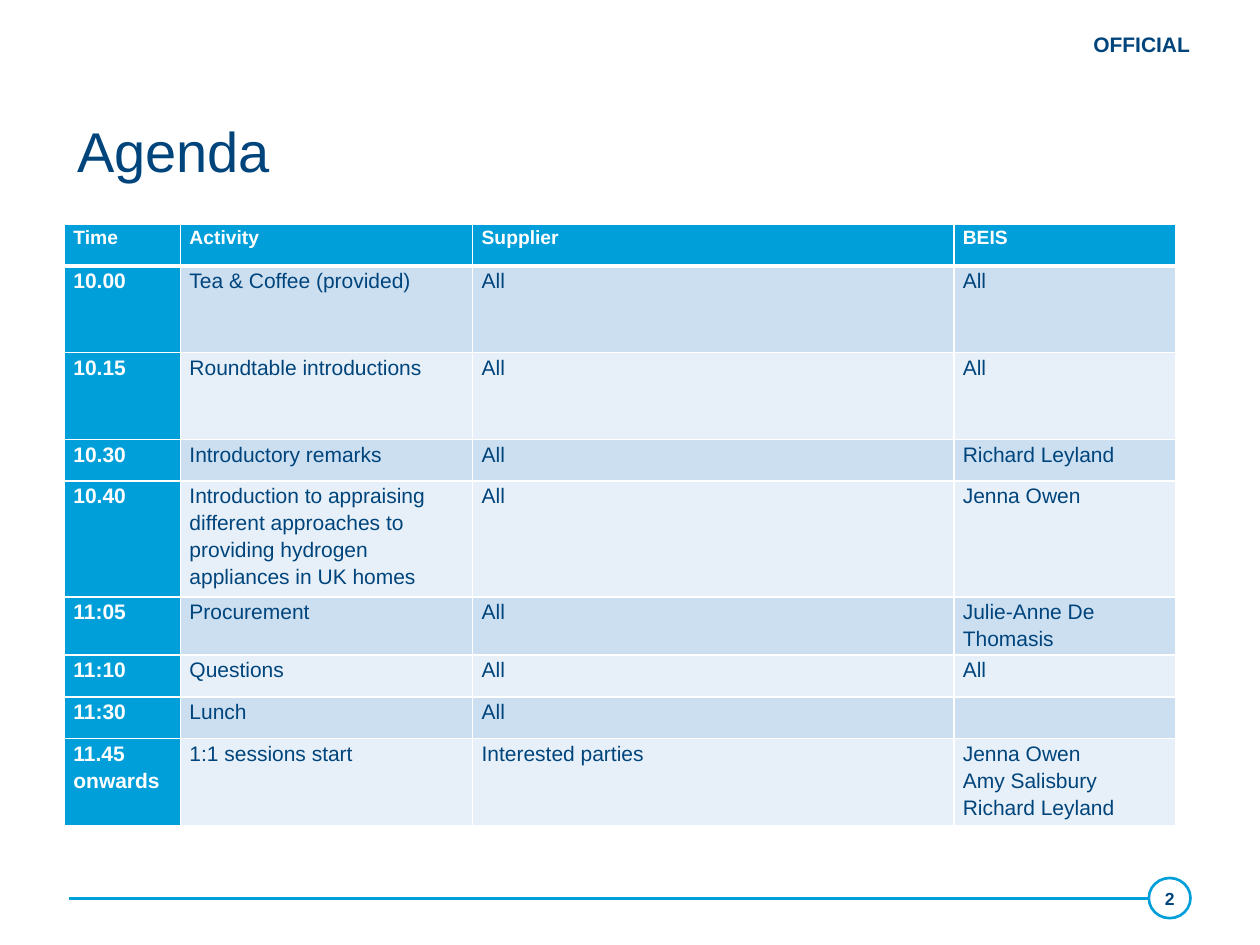
"""Build the agenda slide with its timetable."""
from dataclasses import dataclass

from lxml.etree import SubElement
from pptx import Presentation
from pptx.dml.color import RGBColor
from pptx.enum.shapes import MSO_CONNECTOR as Conn, MSO_SHAPE as Shape
from pptx.enum.text import MSO_ANCHOR as Anchor, MSO_AUTO_SIZE as Fit, PP_ALIGN as Align
from pptx.oxml.ns import qn
from pptx.util import Cm, Pt

NAVY, BLUE, WHITE = "00447C", "009FDA", "FFFFFF"
BANDS = ("CCDFF1", "E7F0F8")
COLS = (2.34, 5.89, 9.7, 4.47)
SHORT, MEDIUM, TALL = 0.84, 1.3, 1.75


@dataclass
class Session:
    time: str
    activity: str
    supplier: str
    host: str
    height: float = SHORT


HEADER = Session("Time", "Activity", "Supplier", "BEIS")
SESSIONS = [
    Session("10.00", "Tea & Coffee (provided)", "All", "All", TALL),
    Session("10.15", "Roundtable introductions", "All", "All", TALL),
    Session("10.30", "Introductory remarks", "All", "Richard Leyland"),
    Session("10.40", "Introduction to appraising different approaches to providing "
            "hydrogen appliances in UK homes", "All", "Jenna Owen", MEDIUM),
    Session("11:05", "Procurement", "All", "Julie-Anne De Thomasis"),
    Session("11:10", "Questions", "All", "All"),
    Session("11:30", "Lunch", "All", ""),
    Session("11.45 onwards", "1:1 sessions start", "Interested parties",
            "Jenna Owen\nAmy Salisbury\nRichard Leyland"),
]


def rgb(color: str) -> RGBColor:
    return RGBColor.from_string(color)


def add_run(p, text: str, size: float, color: str = NAVY, bold: bool = False) -> None:
    r = p.add_run()
    r.text = text
    r.font.name, r.font.size, r.font.bold = "Arial", Pt(size), bold
    r.font.color.rgb = rgb(color)


def add_border(cell, side: str, width: float) -> None:
    ln = SubElement(cell._tc.get_or_add_tcPr(), qn(f"a:ln{side}"), w=str(Pt(width)))
    SubElement(SubElement(ln, qn("a:solidFill")), qn("a:srgbClr"), val=WHITE)


def fill_cell(cell, text: str, row: int, col: int) -> None:
    strong = row == 0 or col == 0
    cell.margin_left = cell.margin_right = Cm(0.18)
    cell.margin_top = cell.margin_bottom = 0
    widths = {"L": 1, "R": 1, "T": 3 if row == 1 else 1, "B": 3 if row == 0 else 1}
    for side, width in widths.items():
        add_border(cell, side, width)
    cell.fill.solid()
    cell.fill.fore_color.rgb = rgb(BLUE if strong else BANDS[(row - 1) % 2])
    tf = cell.text_frame
    for i, line in enumerate(text.split("\n")):
        p = tf.paragraphs[0] if i == 0 else tf.add_paragraph()
        p.line_spacing = 1.15
        if line:
            add_run(p, line, 12 if row else 11, WHITE if strong else NAVY, strong)


def add_agenda(s) -> None:
    rows = [HEADER, *SESSIONS]
    height = sum(row.height for row in rows)
    table = s.shapes.add_table(len(rows), len(COLS), Cm(1.3), Cm(4.52),
                               Cm(sum(COLS)), Cm(height)).table
    table.first_col = True
    for column, width in zip(table.columns, COLS):
        column.width = Cm(width)
    for i, row in enumerate(rows):
        table.rows[i].height = Cm(row.height)
        for j, text in enumerate((row.time, row.activity, row.supplier, row.host)):
            fill_cell(table.cell(i, j), text, i, j)


def add_footer(s) -> None:
    ring = s.shapes.add_shape(Shape.OVAL, Cm(23.16), Cm(17.7), Cm(0.84), Cm(0.81))
    ring.shadow.inherit = False
    ring.fill.background()
    rule = s.shapes.add_connector(Conn.STRAIGHT, Cm(23.16), Cm(18.11), Cm(1.4), Cm(18.11))
    SubElement(rule._element.spPr, qn("a:effectLst"))
    for sp in (ring, rule):
        sp.line.color.rgb = rgb(BLUE)
        sp.line.width = Pt(1.5)
    tf = s.shapes.add_textbox(Cm(23.11), Cm(17.83), Cm(0.94), Cm(0.56)).text_frame
    tf.word_wrap = True
    tf.vertical_anchor = Anchor.MIDDLE
    tf.margin_left = tf.margin_right = Cm(0.1)
    p = tf.paragraphs[0]
    p.alignment = Align.CENTER
    add_run(p, "2", 10, bold=True)


def add_heading(s) -> None:
    tf = s.shapes.add_textbox(Cm(21.79), Cm(0.51), Cm(2.49), Cm(0.76)).text_frame
    tf.word_wrap = False
    tf.auto_size = Fit.SHAPE_TO_FIT_TEXT
    add_run(tf.paragraphs[0], "OFFICIAL", 12, bold=True)

    title = s.shapes.title
    title.left, title.top, title.width, title.height = Cm(1.3), Cm(2.13), Cm(22.99), Cm(1.98)
    tf = title.text_frame
    tf.auto_size = Fit.NONE
    tf.vertical_anchor = Anchor.MIDDLE
    p = tf.paragraphs[0]
    p.alignment = Align.LEFT
    p.line_spacing = 0.9
    add_run(p, "Agenda", 32)


def main() -> None:
    prs = Presentation()
    prs.slide_width, prs.slide_height = Cm(25.4), Cm(19.05)
    s = prs.slides.add_slide(prs.slide_layouts[5])
    add_heading(s)
    add_agenda(s)
    add_footer(s)
    prs.save("out.pptx")


if __name__ == "__main__":
    main()
